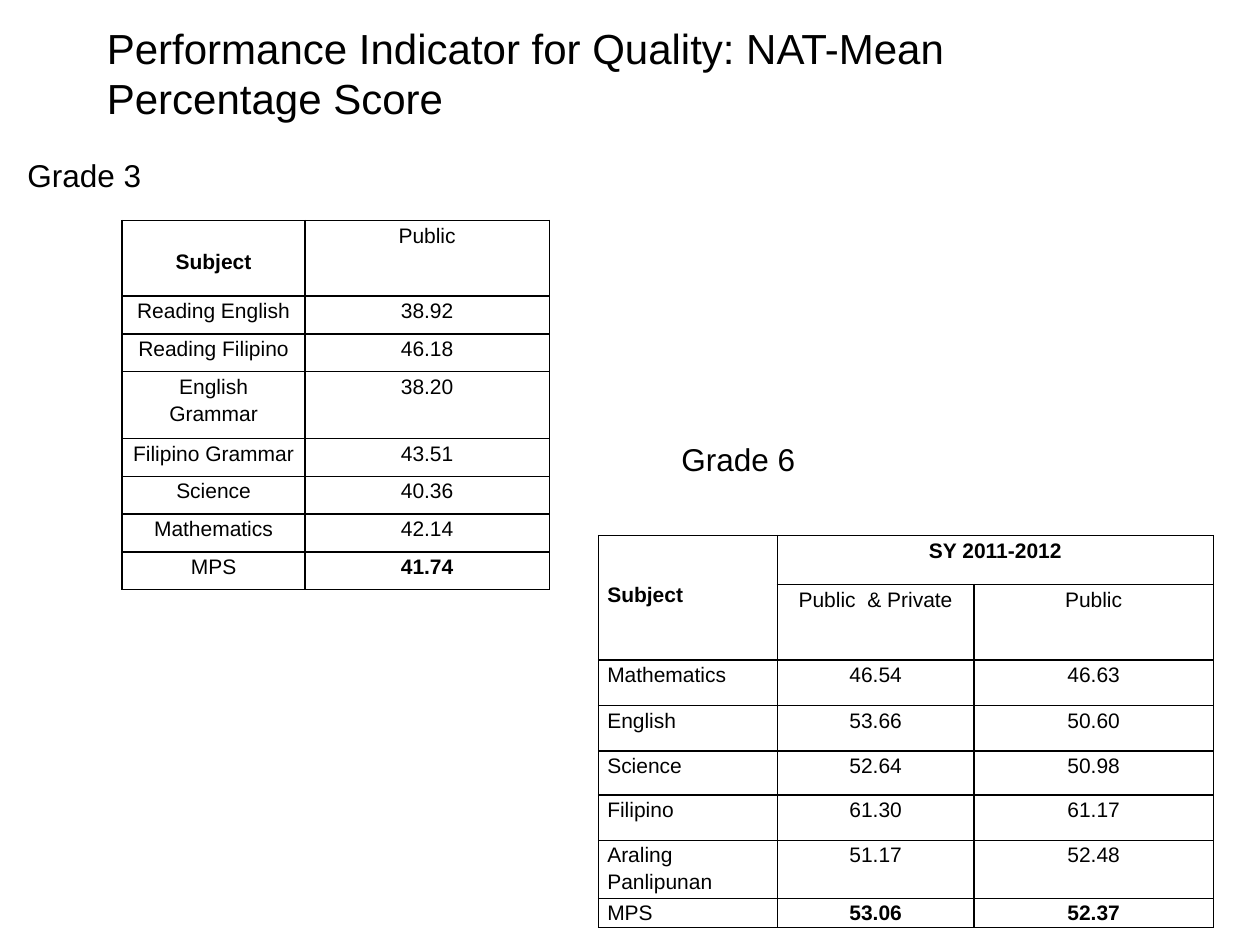
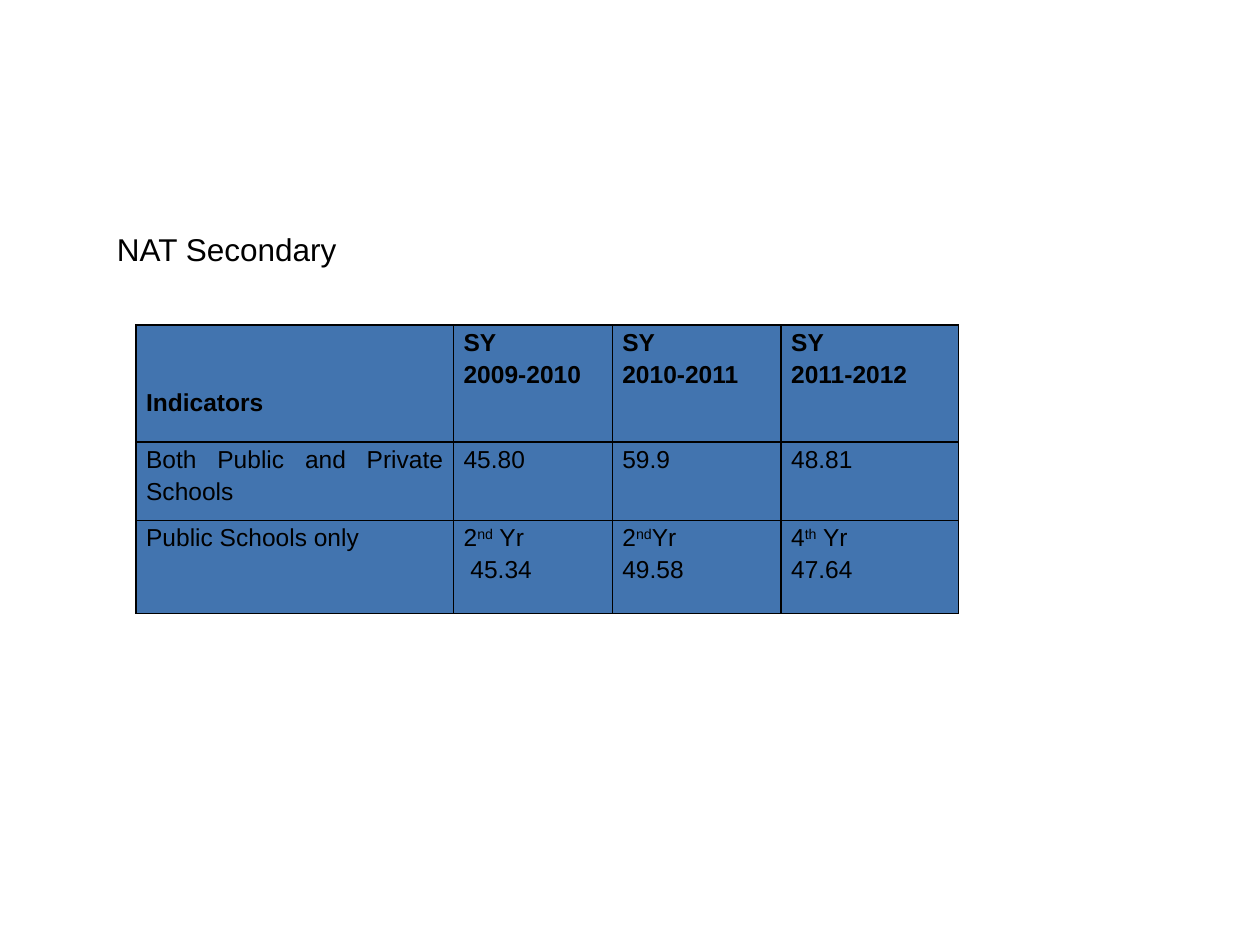
from lxml.etree import SubElement
from pptx import Presentation
from pptx.dml.color import RGBColor
from pptx.enum.text import MSO_AUTO_SIZE as AUTO, PP_ALIGN as AL
from pptx.oxml.ns import qn
from pptx.util import Emu, Pt

PX = 9144  # EMU per px, 100 px to the inch
FONT, BLACK, BLUE = "Arial", "000000", "4274AF"


def px(n):
    return Emu(n * PX)


def rgb(hex_str):
    return RGBColor.from_string(hex_str)


class Deck:
    def __init__(self, w, h):
        self.prs = Presentation()
        self.prs.slide_width, self.prs.slide_height = px(w), px(h)
        self.s = None

    def slide(self):
        self.s = self.prs.slides.add_slide(self.prs.slide_layouts[6])

    def style(self, r, size, bold=False):
        r.font.name, r.font.size, r.font.bold = FONT, Pt(size), bold
        r.font.color.rgb = rgb(BLACK)

    def label(self, x, y, w, h, text, size=18):
        tf = self.s.shapes.add_textbox(px(x), px(y), px(w), px(h)).text_frame
        tf.word_wrap, tf.auto_size = True, AUTO.SHAPE_TO_FIT_TEXT
        tf.text = text
        self.style(tf.paragraphs[0].runs[0], size)

    def border(self, cell):
        tcPr = cell._tc.get_or_add_tcPr()
        for side in ("lnL", "lnR", "lnT", "lnB"):
            ln = SubElement(tcPr, qn("a:" + side), w=str(Pt(1)))
            fill = SubElement(ln, qn("a:solidFill"))
            SubElement(fill, qn("a:srgbClr"), val=BLACK)

    def cell_text(self, cell, text, size, bold, align, after):
        """Lines are split at newlines; text between ^ marks is raised."""
        tf = cell.text_frame
        for i, line in enumerate(text.split("\n")):
            p = tf.add_paragraph() if i else tf.paragraphs[0]
            p.alignment, p.line_spacing, p.space_after = align, 1.15, Pt(after)
            for j, part in enumerate(line.split("^")):
                r = p.add_run()
                r.text = part
                self.style(r, size, bold)
                if j % 2:
                    r.font._element.set("baseline", "30000")

    def table(self, x, y, cols, heights, rows, bold, aligns, head_top,
              size=12, margin=8, after=0, fill=None, merges=()):
        frame = self.s.shapes.add_table(len(rows), len(cols), px(x), px(y),
                                        px(sum(cols)), px(sum(heights)))
        tbl = frame.table
        tbl.first_row = tbl.horz_banding = False
        for col, w in zip(tbl.columns, cols):
            col.width = px(w)
        for row, h in zip(tbl.rows, heights):
            row.height = px(h)
        for i, row in enumerate(rows):
            for j, text in enumerate(row):
                cell = tbl.cell(i, j)
                cell.margin_left = cell.margin_right = px(margin)
                cell.margin_top = px(head_top if i == j == 0 else 0)
                cell.margin_bottom = 0
                self.border(cell)
                if fill:
                    cell.fill.solid()
                    cell.fill.fore_color.rgb = rgb(fill)
                else:
                    cell.fill.background()
                if text:
                    self.cell_text(cell, text, size, (i, j) in bold,
                                   aligns[j], after)
        for start, end in merges:
            tbl.cell(*start).merge(tbl.cell(*end))


def main():
    d = Deck(1000, 750)

    # Slide 1: elementary results
    d.slide()
    d.label(75, 13, 740, 91,
            "Performance Indicator for Quality: NAT-Mean Percentage Score", 24)

    # Grade 3
    grade3 = [("Subject", "Public"), ("Reading English", "38.92"),
              ("Reading Filipino", "46.18"), ("English Grammar", "38.20"),
              ("Filipino Grammar", "43.51"), ("Science", "40.36"),
              ("Mathematics", "42.14"), ("MPS", "41.74")]
    d.table(97, 175, [145, 194], [60, 30, 30, 53] + [30] * 4, grade3,
            bold={(0, 0), (7, 1)}, aligns=[AL.CENTER] * 2, head_top=21)
    d.label(12, 119, 126, 40, "Grade 3")

    # Grade 6
    grade6 = [("Subject", "SY 2011-2012", ""),
              ("", "Public  & Private", "Public"),
              ("Mathematics", "46.54", "46.63"), ("English", "53.66", "50.60"),
              ("Science", "52.64", "50.98"), ("Filipino", "61.30", "61.17"),
              ("Araling Panlipunan", "51.17", "52.48"),
              ("MPS", "53.06", "52.37")]
    d.table(475, 425, [142, 156, 190], [39, 60, 36, 36, 35, 36, 46, 23], grade6,
            bold={(0, 0), (0, 1), (7, 1), (7, 2)},
            aligns=[AL.JUSTIFY, AL.CENTER, AL.CENTER], head_top=35,
            margin=7, after=10,
            merges=[((0, 0), (1, 0)), ((0, 1), (0, 2))])
    d.label(531, 344, 252, 40, "Grade 6")

    # Slide 2: secondary results
    d.slide()
    secondary = [("Indicators", "SY\n2009-2010", "SY\n2010-2011", "SY\n2011-2012"),
                 ("Both Public and Private Schools", "45.80", "59.9", "48.81"),
                 ("Public Schools only", "2^nd^ Yr\n 45.34",
                  "2^nd^Yr\n49.58", "4^th^ Yr\n47.64")]
    d.table(108, 258, [252, 126, 134, 141], [93, 62, 74], secondary,
            bold={(0, j) for j in range(4)}, aligns=[AL.JUSTIFY] * 4,
            head_top=48, size=14, fill=BLUE)
    d.label(83, 178, 228, 40, "NAT Secondary")

    d.prs.save("out.pptx")


if __name__ == "__main__":
    main()
